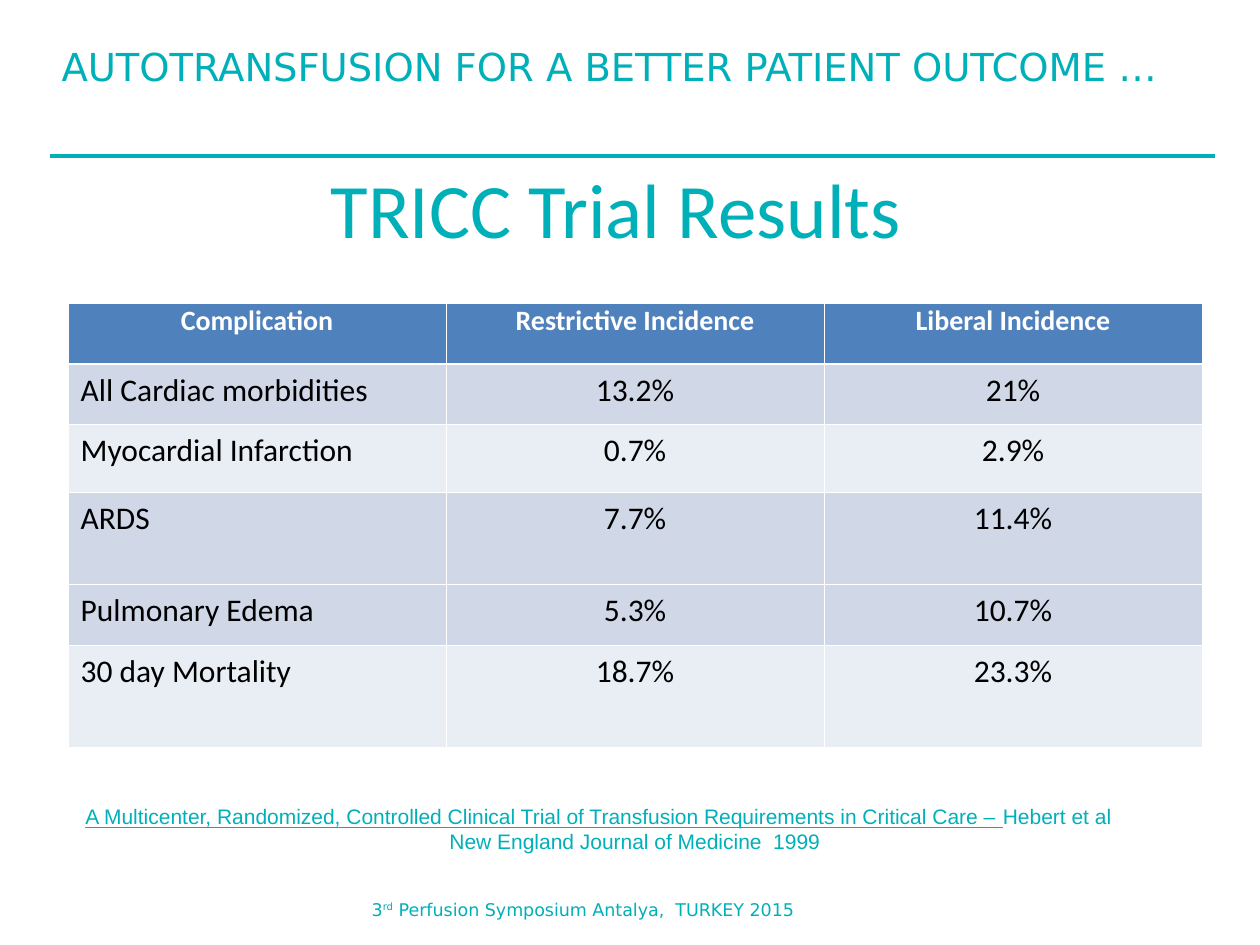
from lxml import etree
from pptx import Presentation, util as u
from pptx.dml.color import RGBColor
from pptx.enum import shapes, text
from pptx.oxml import ns

TEAL = RGBColor(0x00, 0xB0, 0xB9)
BLUE = RGBColor(0x4F, 0x81, 0xBD)
BAND_DARK = RGBColor(0xD0, 0xD8, 0xE8)
BAND_LIGHT = RGBColor(0xE9, 0xED, 0xF4)
WHITE = RGBColor(0xFF, 0xFF, 0xFF)
BLACK = RGBColor(0x00, 0x00, 0x00)

deck = Presentation()
deck.slide_width, deck.slide_height = u.Inches(10), u.Inches(7.5)
COL = deck.slide_width / 100
ROW = deck.slide_height / 75
slide = deck.slides.add_slide(deck.slide_layouts[5])


def area(left, top, width, height):
    return int(left * COL), int(top * ROW), int(width * COL), int(height * ROW)


def style(paragraph, font, size, color, bold=False):
    for run in paragraph.runs:
        run.font.name = font
        run.font.size = u.Pt(size)
        run.font.color.rgb = color
        run.font.bold = bold


rule = slide.shapes.add_connector(
    shapes.MSO_CONNECTOR.STRAIGHT,
    int(4 * COL), int(12.4 * ROW), int(96.4 * COL), int(12.4 * ROW))
rule.line.color.rgb = TEAL
rule.line.width = u.Pt(2)
etree.SubElement(rule._element.spPr, ns.qn("a:effectLst"))

heading = slide.shapes.title
heading.left, heading.top, heading.width, heading.height = area(3.9, 12.3, 90, 15.7)
heading.text_frame.text = "TRICC Trial Results"
heading.text_frame.vertical_anchor = text.MSO_ANCHOR.TOP
heading.text_frame.paragraphs[0].alignment = text.PP_ALIGN.CENTER
style(heading.text_frame.paragraphs[0], "Calibri", 44, TEAL)

results = [
    ("Complication", "Restrictive Incidence", "Liberal Incidence"),
    ("All Cardiac morbidities", "13.2%", "21%"),
    ("Myocardial Infarction", "0.7%", "2.9%"),
    ("ARDS", "7.7%", "11.4%"),
    ("Pulmonary Edema", "5.3%", "10.7%"),
    ("30 day Mortality", "18.7%", "23.3%"),
]
row_heights = [4.8, 4.8, 5.4, 7.3, 4.8, 8.1]
row_fills = [BLUE, BAND_DARK, BAND_LIGHT, BAND_DARK, BAND_DARK, BAND_LIGHT]

trial = slide.shapes.add_table(
    len(results), 3, *area(5.4, 24.1, 90, sum(row_heights))).table
for r, (values, height, fill) in enumerate(zip(results, row_heights, row_fills)):
    trial.rows[r].height = int(height * ROW)
    for c, value in enumerate(values):
        cell = trial.cell(r, c)
        cell.text_frame.text = value
        cell.fill.solid()
        cell.fill.fore_color.rgb = fill
        cell.margin_left = cell.margin_right = int((1 if r else 0.8) * COL)
        cell.margin_top = cell.margin_bottom = int((0.5 if r else 0) * ROW)
        entry = cell.text_frame.paragraphs[0]
        entry.line_spacing = 1.02
        centred = r == 0 or c > 0
        entry.alignment = text.PP_ALIGN.CENTER if centred else text.PP_ALIGN.LEFT
        style(entry, "Calibri", 18 if r else 16, BLACK if r else WHITE, r == 0)
        borders = cell._tc.get_or_add_tcPr()
        for place, side in enumerate("LRTB"):
            thick = (r, side) in ((0, "B"), (1, "T"))
            edge = etree.Element(ns.qn(f"a:ln{side}"), w=str(u.Pt(1.47 if thick else 0.45)))
            paint = etree.SubElement(edge, ns.qn("a:solidFill"))
            etree.SubElement(paint, ns.qn("a:srgbClr"), val=str(WHITE))
            borders.insert(place, edge)

citation = slide.shapes.add_textbox(*area(5.8, 63.3, 89.2, 7.1)).text_frame
citation.word_wrap = True
study = citation.paragraphs[0]
study.alignment = text.PP_ALIGN.LEFT
study_title = study.add_run()
study_title.text = ("A Multicenter, Randomized, Controlled Clinical Trial of "
                    "Transfusion Requirements in Critical Care – ")
study_title.font.underline = True
study.add_run().text = "Hebert et al"
journal = citation.add_paragraph()
journal.text = "New England Journal of Medicine  1999"
journal.alignment = text.PP_ALIGN.CENTER
for paragraph in citation.paragraphs:
    style(paragraph, "Arial", 12, TEAL)

event = slide.shapes.add_textbox(*area(29.5, 70.5, 42.5, 3.3)).text_frame
event.word_wrap = True
event.vertical_anchor = text.MSO_ANCHOR.MIDDLE
event.margin_left = event.margin_right = event.margin_top = event.margin_bottom = 0
for part in ("3", "rd", " Perfusion Symposium Antalya,  TURKEY 2015"):
    event.paragraphs[0].add_run().text = part
style(event.paragraphs[0], "DejaVu Sans", 10, TEAL)
event.paragraphs[0].runs[1].font._element.set("baseline", "30000")

banner = slide.shapes.add_textbox(*area(3.9, 2.9, 92.4, 7.6)).text_frame
banner.word_wrap = True
banner.text = "AUTOTRANSFUSION FOR A BETTER PATIENT OUTCOME …"
style(banner.paragraphs[0], "DejaVu Sans", 22, TEAL)

deck.save("out.pptx")
